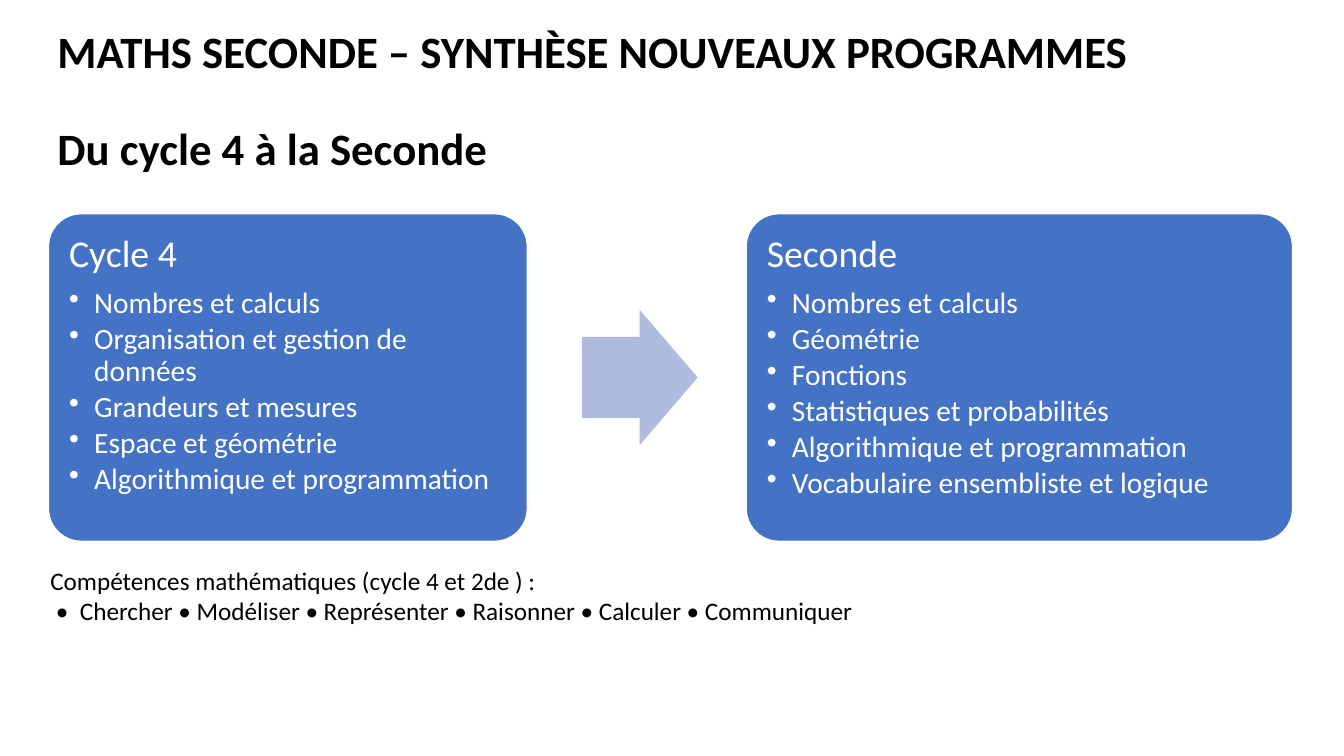
from lxml import etree
from pptx import Presentation
from pptx import util as u
from pptx.dml.color import RGBColor
from pptx.enum import shapes, text
from pptx.oxml.ns import qn

FONT = "Calibri"
CARD_TOP, CARD_HEIGHT = 2.12, 3.25
ARROW_WIDTH, ARROW_HEIGHT = 1.15, 1.34


def color(value):
    return RGBColor.from_string(value)


def style(para, size, shade, bold=False):
    para.font.name = FONT
    para.font.size = u.Pt(size)
    para.font.bold = bold
    para.font.color.rgb = color(shade)
    para.alignment = text.PP_ALIGN.LEFT


deck = Presentation()
deck.slide_width, deck.slide_height = u.Inches(13.33), u.Inches(7.5)
page = deck.slides.add_slide(deck.slide_layouts[5])

# Title: two lines, one line apart
title = page.shapes.title
title.left, title.top = u.Inches(0.47), u.Inches(0.41)
title.width, title.height = u.Inches(11.91), u.Inches(1.21)
frame = title.text_frame
frame.text = "MATHS SECONDE – SYNTHÈSE NOUVEAUX PROGRAMMES\nDu cycle 4 à la Seconde"
frame.auto_size = text.MSO_AUTO_SIZE.NONE
frame.vertical_anchor = text.MSO_ANCHOR.MIDDLE
for para in frame.paragraphs:
    style(para, 32, "000000", bold=True)
    para.line_spacing = 0.9
frame.paragraphs[1].space_before = u.Pt(35)

# Cards: heading and bulleted topics
cards = [
    (0.48, 4.75, "Cycle 4", [
        "Nombres et calculs", "Organisation et gestion de données",
        "Grandeurs et mesures", "Espace et géométrie",
        "Algorithmique et programmation"]),
    (7.4, 5.42, "Seconde", [
        "Nombres et calculs", "Géométrie", "Fonctions",
        "Statistiques et probabilités", "Algorithmique et programmation",
        "Vocabulaire ensembliste et logique"]),
]
for left, width, heading, topics in cards:
    card = page.shapes.add_shape(
        shapes.MSO_SHAPE.ROUNDED_RECTANGLE, u.Inches(left),
        u.Inches(CARD_TOP), u.Inches(width), u.Inches(CARD_HEIGHT))
    card.adjustments[0] = 0.1
    card.shadow.inherit = False
    card.fill.solid()
    card.fill.fore_color.rgb = color("4472C4")
    card.line.color.rgb = color("FFFFFF")
    card.line.width = u.Pt(1)
    frame = card.text_frame
    frame.word_wrap = True
    frame.vertical_anchor = text.MSO_ANCHOR.TOP
    frame.margin_left = frame.margin_right = u.Inches(0.11)
    frame.margin_top = frame.margin_bottom = u.Inches(0.11)
    frame.text = "\n".join([heading] + topics)
    for index, para in enumerate(frame.paragraphs):
        style(para, 21 if index else 27, "FFFFFF")
        para.line_spacing = 0.9
        para.space_after = u.Pt(3 if index else 9.5)
        if index:
            para.level = 1
            props = para._p.get_or_add_pPr()
            props.set("marL", str(u.Inches(0.25)))
            props.set("indent", str(-u.Inches(0.25)))
            bullet = etree.Element(qn("a:buChar"), char="•")
            props.insert_element_before(bullet, "a:tabLst", "a:defRPr", "a:extLst")

# Arrow, centred on the height of the cards
arrow = page.shapes.add_shape(
    shapes.MSO_SHAPE.RIGHT_ARROW, u.Inches(5.77),
    u.Inches(CARD_TOP + (CARD_HEIGHT - ARROW_HEIGHT) / 2),
    u.Inches(ARROW_WIDTH), u.Inches(ARROW_HEIGHT))
arrow.adjustments[0], arrow.adjustments[1] = 0.6, 0.5
arrow.shadow.inherit = False
arrow.fill.solid()
arrow.fill.fore_color.rgb = color("B0BCDE")
arrow.line.fill.background()

# Shared skills
skills = page.shapes.add_textbox(
    u.Inches(0.4), u.Inches(5.56), u.Inches(12.42), u.Inches(0.71))
frame = skills.text_frame
frame.word_wrap = True
frame.auto_size = text.MSO_AUTO_SIZE.SHAPE_TO_FIT_TEXT
frame.text = ("Compétences mathématiques (cycle 4 et 2de ) :\n"
              " •  Chercher • Modéliser • Représenter • Raisonner • Calculer • Communiquer")
for para in frame.paragraphs:
    style(para, 18, "000000")

deck.save("out.pptx")
